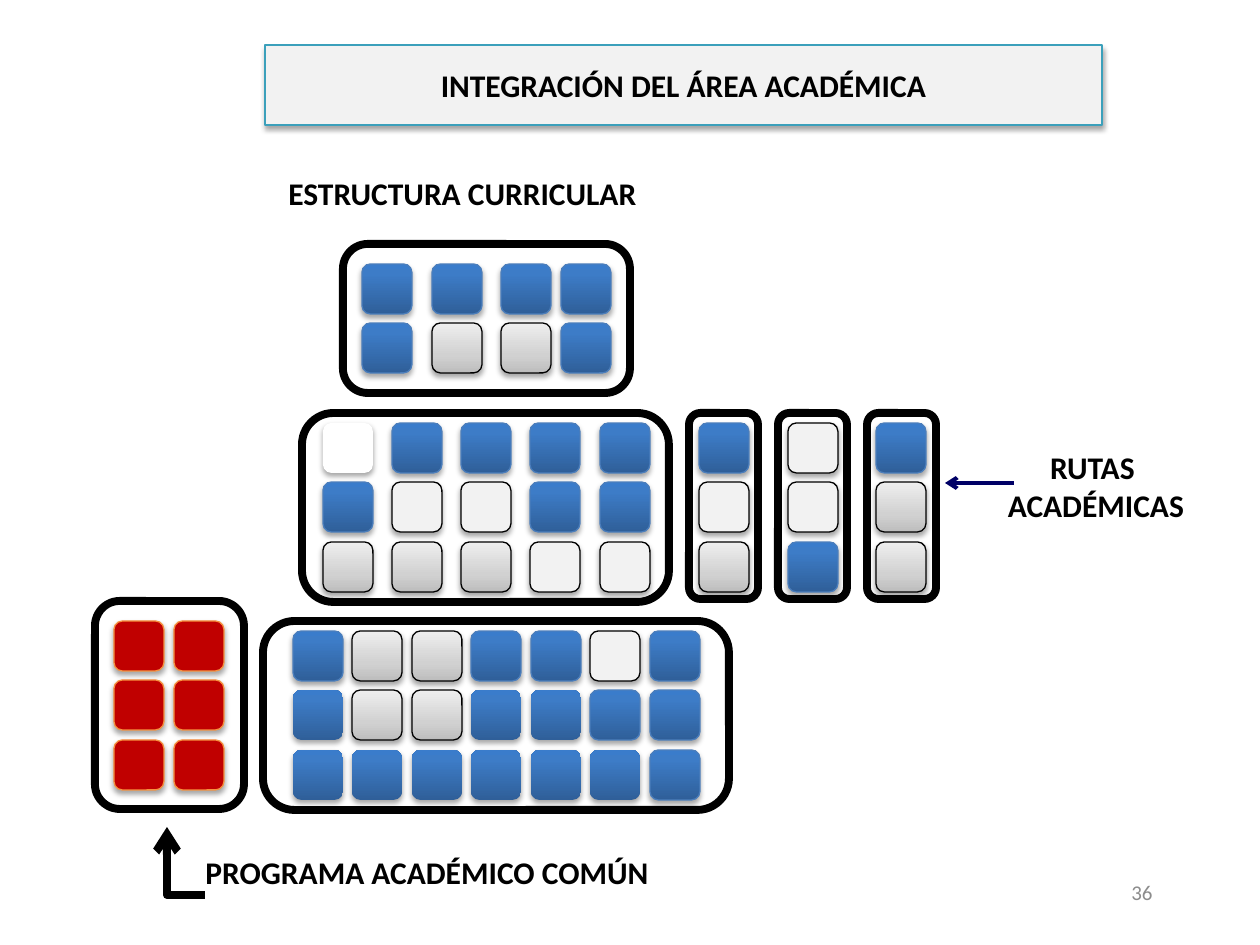
"""Build the slide on the integration of the academic area."""
from lxml.etree import SubElement
from pptx import Presentation
from pptx.dml.color import RGBColor
from pptx.enum.shapes import MSO_CONNECTOR as CONNECTOR, MSO_SHAPE as SHAPE
from pptx.enum.text import MSO_ANCHOR as ANCHOR, PP_ALIGN as ALIGN
from pptx.oxml.ns import qn
from pptx.util import Pt

PX = 914400 / 126
CELL = 50
BLUE = [(0, "2F5F99"), (80, "3D7CC7"), (100, "3A7CCB")]
GRAY = [(0, "BDBDBD"), (35, "D1D1D1"), (100, "EEEEEE")]
STYLES = {
    "B": (BLUE, "4B7EBC"),
    "P": (BLUE, None),
    "G": (GRAY, "000000"),
    "L": ("F2F2F2", "000000"),
    "W": ("FFFFFF", None),
    "R": ("C00000", "F69240"),
}
PANELS = [
    ((343, 244, 287, 149), 264, [362, 432, 501, 561], ["BBBB", "BGGB"]),
    ((302, 413, 367, 189), 423, [323, 392, 461, 530, 600], ["WBBBB", "BLLBB", "GGGLL"]),
    ((263, 621, 466, 189), 631, [293, 352, 412, 471, 531, 590, 650],
     ["BGGBBLB", "PGGPPBB", "PPPPPPB"]),
    ((95, 601, 149, 208), 621, [114, 174], ["RR", "RR", "RR"]),
    ((689, 413, 69, 186), 423, [699], "BLG"),
    ((778, 413, 69, 186), 423, [788], "LLB"),
    ((867, 413, 69, 186), 423, [876], "BGG"),
]
TEXTS = [
    ((276, 168, 464, 50), ["ESTRUCTURA CURRICULAR"], ALIGN.LEFT, 18, "000000", True),
    ((932, 441, 328, 90), ["RUTAS ", "ACADÉMICAS"], ALIGN.CENTER, 18, "000000", True),
    ((903, 861, 262, 63), ["36"], ALIGN.RIGHT, 12, "8C8C8C", False),
    ((186, 847, 490, 50), [" PROGRAMA ACADÉMICO COMÚN"], ALIGN.LEFT, 18, "000000", True),
]

rgb = RGBColor.from_string
presentation = Presentation()
presentation.slide_width = round(1260 * PX)
presentation.slide_height = round(945 * PX)
slide = presentation.slides.add_slide(presentation.slide_layouts[6])


def add_box(kind, bounds, fill, line, width=0.75, shadow=True):
    shape = slide.shapes.add_shape(kind, *[round(value * PX) for value in bounds])
    shape.shadow.inherit = False
    properties = shape._element.spPr
    if isinstance(fill, str):
        shape.fill.solid()
        shape.fill.fore_color.rgb = rgb(fill)
    else:
        shape.fill.gradient()
        shape.fill.gradient_angle = 90
        stops = properties.find(".//" + qn("a:gsLst"))
        stops.clear()
        for position, color in fill:
            stop = SubElement(stops, qn("a:gs"), pos=str(position * 1000))
            SubElement(stop, qn("a:srgbClr"), val=color)
    if line:
        shape.line.color.rgb = rgb(line)
        shape.line.width = Pt(width)
    else:
        shape.line.fill.background()
    if shadow:
        outer = SubElement(properties.find(qn("a:effectLst")), qn("a:outerShdw"),
                           blurRad=str(Pt(3.1)), dist=str(Pt(1.8)), dir="5400000",
                           rotWithShape="0")
        black = SubElement(outer, qn("a:srgbClr"), val="000000")
        SubElement(black, qn("a:alpha"), val="35000")
    return shape


def write_lines(shape, lines, align, size, color, bold):
    frame = shape.text_frame
    frame.word_wrap = True
    for index, line in enumerate(lines):
        paragraph = frame.add_paragraph() if index else frame.paragraphs[0]
        paragraph.alignment = align
        run = paragraph.add_run()
        run.text = line
        run.font.name = "Calibri"
        run.font.size = Pt(size)
        run.font.bold = bold
        run.font.color.rgb = rgb(color)


title = add_box(SHAPE.RECTANGLE, (265, 45, 837, 80), "F2F2F2", "3BA0BB")
title.text_frame.vertical_anchor = ANCHOR.MIDDLE
write_lines(title, ["INTEGRACIÓN DEL ÁREA ACADÉMICA"], ALIGN.CENTER, 18, "000000", True)

for bounds, top, columns, rows in PANELS:
    add_box(SHAPE.ROUNDED_RECTANGLE, bounds, "FFFFFF", "000000", 4.5, False)
    for row, codes in enumerate(rows):
        for left, code in zip(columns, codes):
            cell = (left, top + row * 119 // 2, CELL, CELL)
            add_box(SHAPE.ROUNDED_RECTANGLE, cell, *STYLES[code])

for bounds, lines, align, size, color, bold in TEXTS:
    text_box = slide.shapes.add_textbox(*[round(value * PX) for value in bounds])
    text_box.text_frame.vertical_anchor = ANCHOR.MIDDLE
    write_lines(text_box, lines, align, size, color, bold)

routes_arrow = slide.shapes.add_connector(
    CONNECTOR.STRAIGHT, *[round(value * PX) for value in (1014, 483, 945, 483)])
SubElement(routes_arrow._element.spPr, qn("a:effectLst"))

builder = slide.shapes.build_freeform(205, 895, scale=PX)
builder.add_line_segments([(167, 895), (167, 827)], close=False)
program_arrow = builder.convert_to_shape()
program_arrow.shadow.inherit = False
program_arrow.fill.background()

for arrow, color, width in [(routes_arrow, "000066", 2.25), (program_arrow, "000000", 4.5)]:
    arrow.line.color.rgb = rgb(color)
    arrow.line.width = Pt(width)
    SubElement(arrow.line._get_or_add_ln(), qn("a:tailEnd"), type="arrow")

presentation.save("out.pptx")
